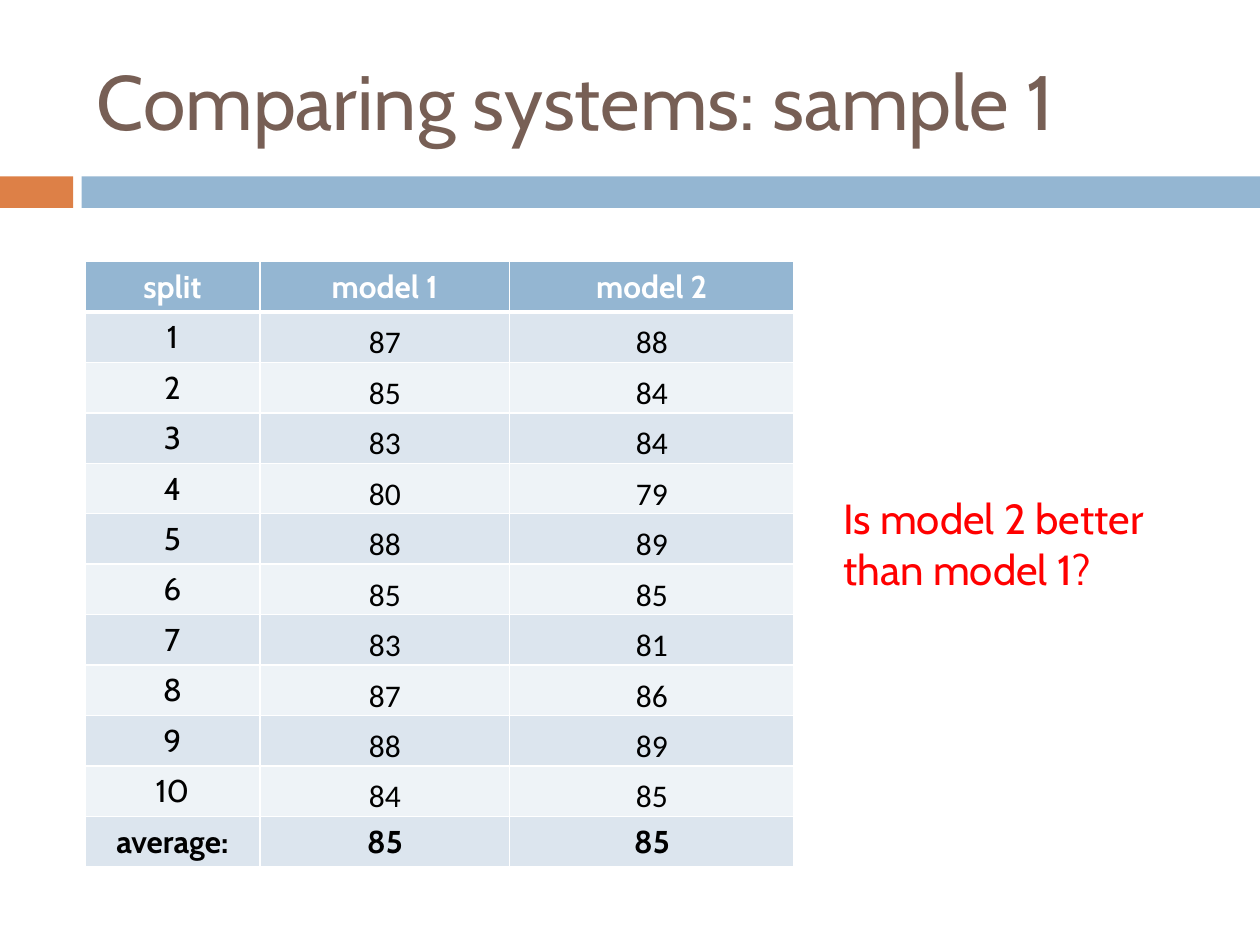
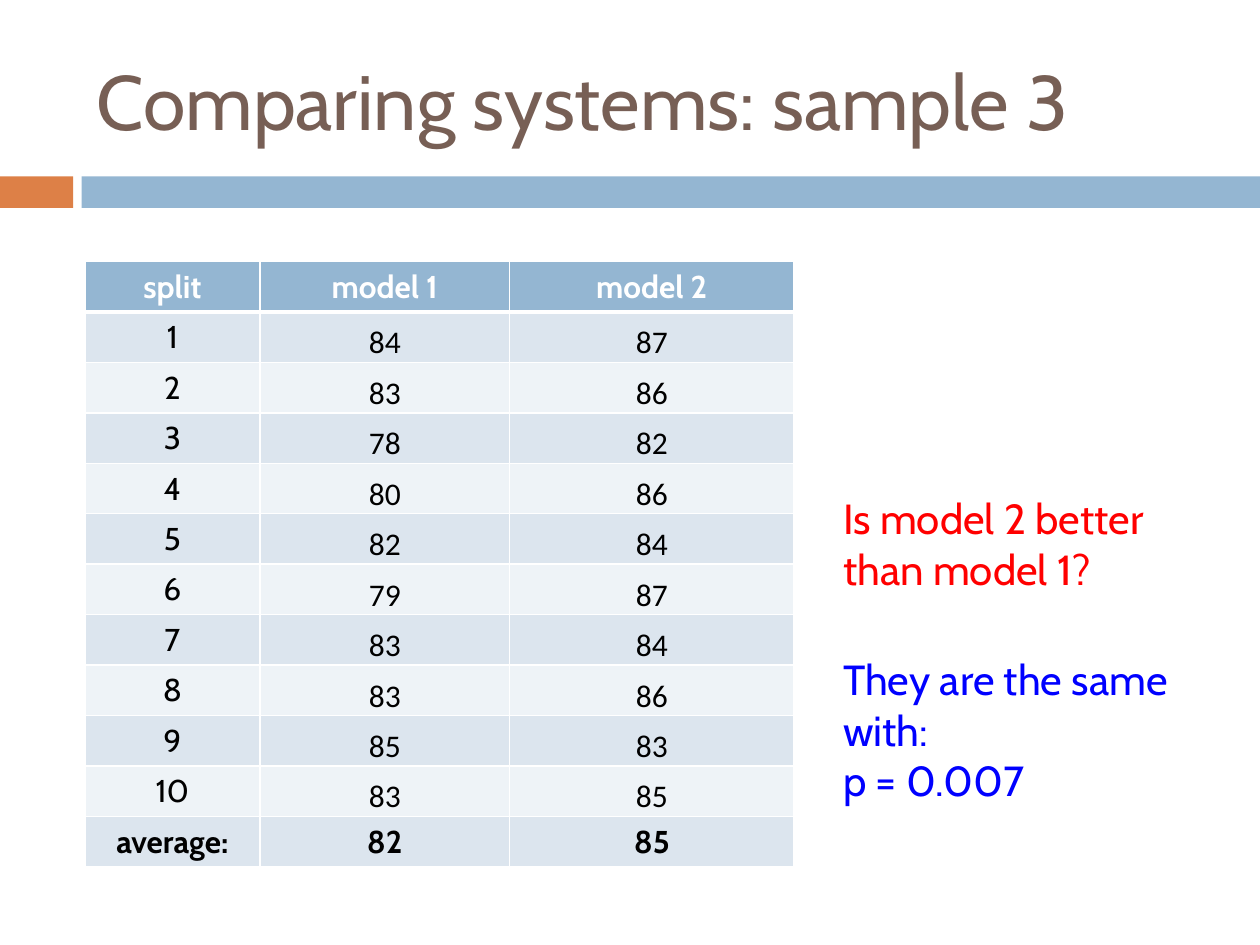
"""Build two slides that compare the scores of two models over ten splits."""
from dataclasses import dataclass

from lxml import etree
from pptx import Presentation
from pptx.dml.color import RGBColor
from pptx.enum import shapes, text
from pptx.oxml import ns
from pptx.util import Pt


@dataclass(frozen=True)
class Theme:
    title: str = "775F55"
    accent: str = "DD8047"
    band: str = "94B6D2"
    row_dark: str = "DCE5EE"
    row_light: str = "EEF3F7"
    white: str = "FFFFFF"
    black: str = "000000"
    question: str = "FF0000"
    answer: str = "0000FF"
    font: str = "Cabin"
    score_font: str = "Calibri"
    title_size: int = 44
    note_size: int = 24
    table_size: int = 18


theme = Theme()


def write(frame, lines, size, color, font=theme.font, bold=False, align=text.PP_ALIGN.LEFT):
    for number, line in enumerate(lines):
        para = frame.add_paragraph() if number else frame.paragraphs[0]
        para.alignment = align
        span = para.add_run()
        span.text = line
        span.font.size = Pt(size)
        span.font.name = font
        span.font.bold = bold
        span.font.color.rgb = RGBColor.from_string(color)


def add_border(cell, side, width):
    line = etree.SubElement(cell._tc.get_or_add_tcPr(), ns.qn(f"a:ln{side}"), w=str(Pt(width)))
    fill = etree.SubElement(line, ns.qn("a:solidFill"))
    etree.SubElement(fill, ns.qn("a:srgbClr"), val=theme.white)


bands = [(0, 41.8, theme.accent), (46.6, 673.4, theme.band)]
column_widths = [100, 142.8, 162.4]
header = ["split", "model 1", "model 2"]
question = (278, 215.3, ["Is model 2 better than model 1?"], theme.question)
answer = (370, 242.6, ["They are the same with:", "p = 0.007"], theme.answer)
samples = [
    {
        "title": "Comparing systems: sample 1",
        "model 1": [87, 85, 83, 80, 88, 85, 83, 87, 88, 84],
        "model 2": [88, 84, 84, 79, 89, 85, 81, 86, 89, 85],
        "notes": [question],
    },
    {
        "title": "Comparing systems: sample 3",
        "model 1": [84, 83, 78, 80, 82, 79, 83, 83, 85, 83],
        "model 2": [87, 86, 82, 86, 84, 87, 84, 86, 83, 85],
        "notes": [question, answer],
    },
]

deck = Presentation()
deck.slide_width, deck.slide_height = Pt(720), Pt(540)

for sample in samples:
    page = deck.slides.add_slide(deck.slide_layouts[6])

    for left, width, color in bands:
        band = page.shapes.add_shape(
            shapes.MSO_SHAPE.RECTANGLE, Pt(left), Pt(100.8), Pt(width), Pt(18))
        band.shadow.inherit = False
        band.fill.solid()
        band.fill.fore_color.rgb = RGBColor.from_string(color)
        band.line.fill.background()

    box = page.shapes.add_textbox(Pt(48.3), Pt(18), Pt(642), Pt(78))
    box.text_frame.word_wrap = True
    box.text_frame.vertical_anchor = text.MSO_ANCHOR.MIDDLE
    write(box.text_frame, [sample["title"]], theme.title_size, theme.title)

    scores = list(zip(sample["model 1"], sample["model 2"]))
    averages = [round(sum(column) / len(column)) for column in zip(*scores)]
    rows = [header]
    rows += [[split, *pair] for split, pair in enumerate(scores, 1)]
    rows += [["average:", *averages]]
    last = len(rows) - 1

    table = page.shapes.add_table(
        len(rows), len(header), Pt(48.5), Pt(149.4), Pt(sum(column_widths)), Pt(28 * len(rows))).table
    for column, width in zip(table.columns, column_widths):
        column.width = Pt(width)

    for r, row in enumerate(rows):
        fill = theme.band if r == 0 else theme.row_dark if r % 2 else theme.row_light
        for c, value in enumerate(row):
            cell = table.cell(r, c)
            for side in "LRTB":
                heavy = (r, side) in [(0, "B"), (1, "T")]
                add_border(cell, side, 3 if heavy else 1)
            cell.fill.solid()
            cell.fill.fore_color.rgb = RGBColor.from_string(fill)
            is_score = 0 < r < last and c > 0
            if is_score:
                cell.vertical_anchor = text.MSO_ANCHOR.BOTTOM
                cell.margin_left = cell.margin_right = cell.margin_top = Pt(0.75)
                cell.margin_bottom = Pt(0)
            write(cell.text_frame, [str(value)], theme.table_size,
                  theme.black if r else theme.white,
                  font=theme.score_font if is_score else theme.font,
                  bold=r in (0, last), align=text.PP_ALIGN.CENTER)

    for top, width, lines, color in sample["notes"]:
        box = page.shapes.add_textbox(Pt(474.7), Pt(top), Pt(width), Pt(65.4))
        box.text_frame.word_wrap = True
        write(box.text_frame, lines, theme.note_size, color)

deck.save("out.pptx")
